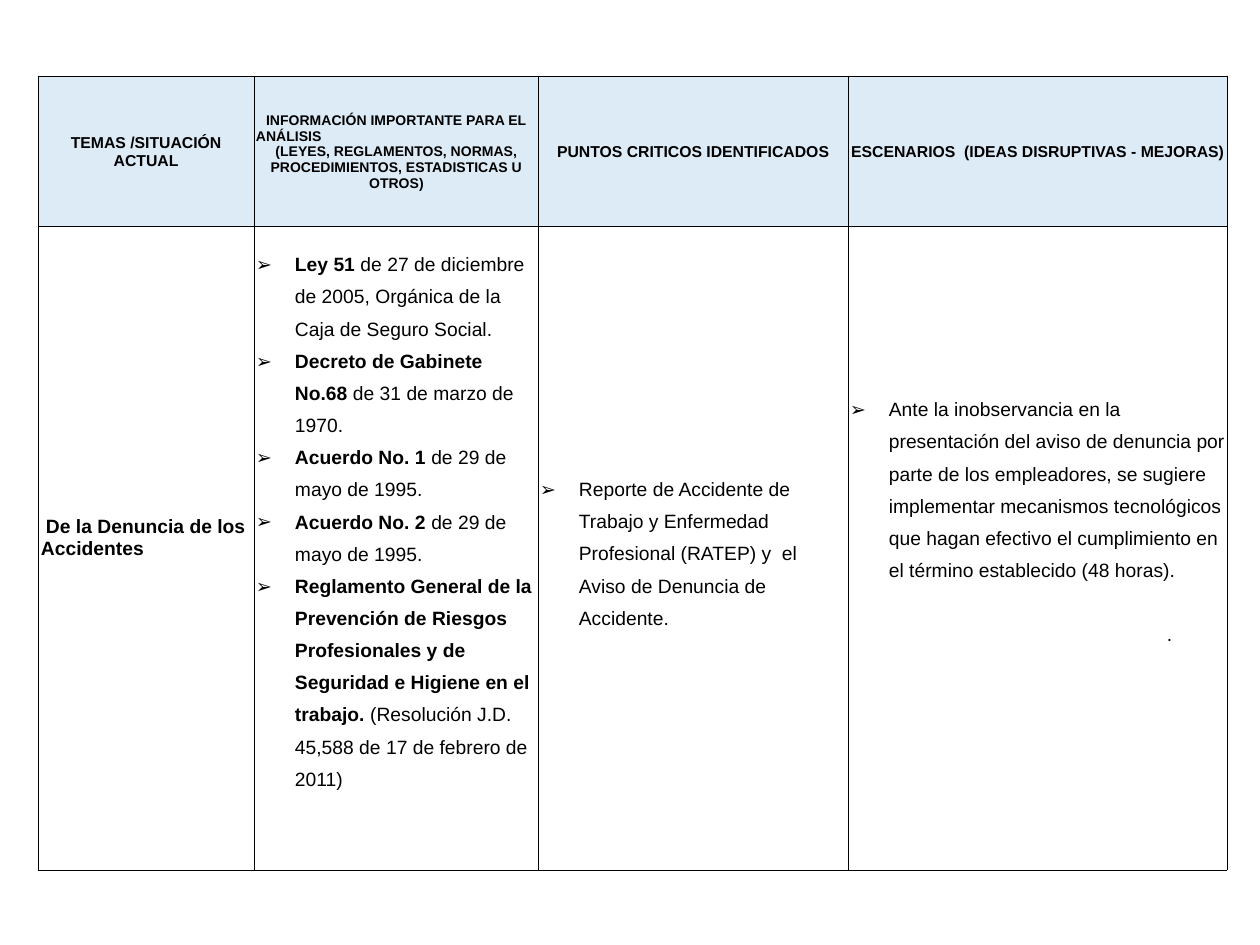
import pptx
import pptx.dml.color
import pptx.enum.text
import pptx.oxml
import pptx.oxml.ns
import pptx.util

ALIGN = pptx.enum.text.PP_ALIGN
SCALE = 914400 // 126
COLUMNS = [216, 284, 310, 379]
ROWS = [150, 644]
HEADERS = [
    (9, [("TEMAS /SITUACIÓN ACTUAL", ALIGN.CENTER, 0)]),
    (8, [("INFORMACIÓN IMPORTANTE PARA EL", ALIGN.CENTER, 1),
         ("ANÁLISIS", ALIGN.LEFT, 2),
         ("(LEYES, REGLAMENTOS, NORMAS, PROCEDIMIENTOS, ESTADISTICAS U OTROS)",
          ALIGN.CENTER, 1)]),
    (9, [("PUNTOS CRITICOS IDENTIFICADOS", ALIGN.CENTER, 0)]),
    (9, [("ESCENARIOS  (IDEAS DISRUPTIVAS - MEJORAS)", ALIGN.CENTER, 0)]),
]
LAWS = [
    ("Ley 51 ", "de 27 de diciembre de 2005, Orgánica de la Caja de Seguro Social."),
    ("Decreto de Gabinete No.68", " de 31 de marzo de 1970."),
    ("Acuerdo No. 1 ", "de 29 de mayo de 1995."),
    ("Acuerdo No. 2", " de 29 de mayo de 1995."),
    ("Reglamento General de la Prevención de Riesgos Profesionales y de Seguridad e Higiene "
     "en el trabajo. ", "(Resolución J.D. 45,588 de 17 de febrero de 2011)"),
]
CRITICAL_POINTS = [
    ("", "Reporte de Accidente de Trabajo y Enfermedad Profesional (RATEP) y  el "
         "Aviso de Denuncia de Accidente."),
]
SCENARIOS = [
    ("", "Ante la inobservancia en la presentación del aviso de denuncia por parte de los "
         "empleadores, se sugiere implementar mecanismos tecnológicos que hagan efectivo el "
         "cumplimiento en el término establecido (48 horas)."),
]


def px(length):
    """Turn pixels into EMU."""
    return pptx.util.Emu(length * SCALE)


def color(value):
    """Turn a hex string into a colour."""
    return pptx.dml.color.RGBColor.from_string(value)


def add_text(paragraph, text, size=11, bold=False, fill="000000"):
    """Add a formatted run to a paragraph."""
    run = paragraph.add_run()
    run.text = text
    run.font.name = "Arial"
    run.font.size = pptx.util.Pt(size)
    run.font.bold = bold
    run.font.color.rgb = color(fill)


def next_paragraph(cell, first):
    """Return the cell's first paragraph or a new one."""
    return cell.text_frame.paragraphs[0] if first else cell.text_frame.add_paragraph()


def set_indent(paragraph, left, first_line):
    """Set the left margin and first-line indent of a paragraph."""
    properties = paragraph._p.get_or_add_pPr()
    properties.set("marL", str(px(left)))
    properties.set("indent", str(px(first_line)))
    return properties


def add_bullets(cell, items):
    """Fill a cell with arrow bullets that open with a bold part."""
    for index, (lead, rest) in enumerate(items):
        paragraph = next_paragraph(cell, index == 0)
        paragraph.line_spacing = 1.5
        properties = set_indent(paragraph, 39, -39)
        for tag, name, value in [("buFont", "typeface", "Arial"), ("buChar", "char", "➢")]:
            bullet = pptx.oxml.parse_xml(
                f'<a:{tag} {pptx.oxml.ns.nsdecls("a")} {name}="{value}"/>')
            properties.append(bullet)
        if lead:
            add_text(paragraph, lead, bold=True)
        add_text(paragraph, rest)


def style_cell(cell, left=0, right=0, bottom=0, fill=None):
    """Set the insets, anchor, thin black borders and fill of a cell."""
    cell.margin_left, cell.margin_right = px(left), px(right)
    cell.margin_top, cell.margin_bottom = px(2), px(bottom)
    cell.vertical_anchor = pptx.enum.text.MSO_ANCHOR.MIDDLE
    properties = cell._tc.get_or_add_tcPr()
    for side in "LRTB":
        properties.append(pptx.oxml.parse_xml(
            f'<a:ln{side} {pptx.oxml.ns.nsdecls("a")} w="6350">'
            f'<a:solidFill><a:srgbClr val="000000"/></a:solidFill></a:ln{side}>'))
    if fill:
        cell.fill.solid()
        cell.fill.fore_color.rgb = color(fill)
    else:
        cell.fill.background()


def add_grid(slide):
    """Add the empty table with its column widths and row heights."""
    frame = slide.shapes.add_table(
        len(ROWS), len(COLUMNS), px(38), px(76), px(sum(COLUMNS)), px(sum(ROWS)))
    table = frame.table
    table.first_row = table.horz_banding = False
    for column, width in zip(table.columns, COLUMNS):
        column.width = px(width)
    for row, height in zip(table.rows, ROWS):
        row.height = px(height)
    return table


def fill_headers(table):
    """Write the header row."""
    for column, (size, lines) in enumerate(HEADERS):
        cell = table.cell(0, column)
        style_cell(cell, fill="DDEBF7")
        for index, (text, alignment, indent) in enumerate(lines):
            paragraph = next_paragraph(cell, index == 0)
            paragraph.alignment = alignment
            set_indent(paragraph, indent, 0)
            add_text(paragraph, text, size=size, bold=True)


def fill_body(table):
    """Write the topic, its laws, critical points and scenarios."""
    topic, laws, points, scenarios = (table.cell(1, column) for column in range(len(COLUMNS)))
    for cell, bottom in [(topic, 22), (laws, 64), (points, 0), (scenarios, 64)]:
        style_cell(cell, left=2, right=1, bottom=bottom)
    paragraph = topic.text_frame.paragraphs[0]
    set_indent(paragraph, 1, 5)
    add_text(paragraph, "De la Denuncia de los Accidentes", bold=True)
    add_bullets(laws, LAWS)
    add_bullets(points, CRITICAL_POINTS)
    add_bullets(scenarios, SCENARIOS)
    paragraph = next_paragraph(scenarios, False)
    paragraph.line_spacing = 1.5
    paragraph.space_before = pptx.util.Pt(18)
    set_indent(paragraph, 317, 0)
    add_text(paragraph, ".")


def main():
    """Build and save the slide."""
    presentation = pptx.Presentation()
    presentation.slide_width = px(1260)
    presentation.slide_height = px(945)
    slide = presentation.slides.add_slide(presentation.slide_layouts[6])
    table = add_grid(slide)
    fill_headers(table)
    fill_body(table)
    presentation.save("out.pptx")


if __name__ == "__main__":
    main()
